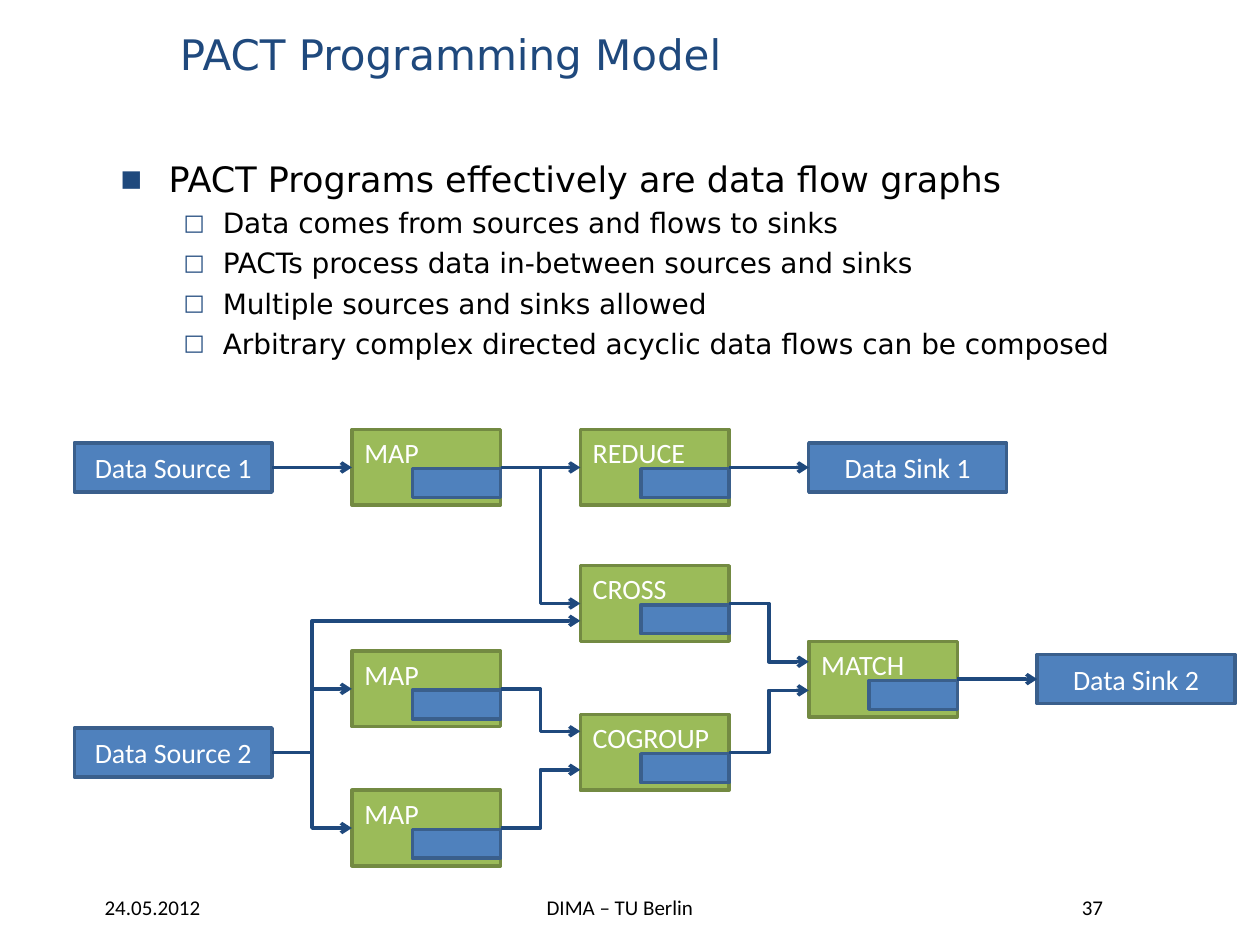
from lxml.etree import SubElement as Sub
from pptx import Presentation
from pptx.dml.color import RGBColor
from pptx.enum.shapes import MSO_CONNECTOR as Link, MSO_SHAPE as Shape
from pptx.enum.text import MSO_ANCHOR as Anchor, PP_ALIGN as Align
from pptx.oxml.ns import qn
from pptx.util import Inches, Pt

NAVY, BLUE, EDGE = "1F497D", "4F81BD", "3A5F8C"
GREEN, MOSS = "9BBB59", "738A42"
WHITE, BLACK = "FFFFFF", "000000"
SANS, BODY = "DejaVu Sans", "Calibri"
WIDE, HIGH = 10, 7.5
LEFT, TOP, COL, ROW = 0.98, 3.71, 1.813, 0.6
PACT_W, PACT_H, END_W, END_H = 1.18, 0.6, 1.57, 0.39
BEND = (COL - PACT_W) / 2


def tint(code):
    """Turn a hex string into a colour."""
    return RGBColor.from_string(code)


class Board:
    """Hold the current slide and its style."""

    def __init__(self, slide):
        """Draw on the given slide."""
        self.slide = slide

    def style(self, para, text, size, face, color, align=Align.LEFT):
        """Fill one paragraph and set its font."""
        para.text, para.alignment = text, align
        font = para.font
        font.size, font.name = Pt(size), face
        font.color.rgb = tint(color)

    def area(self, x, y, w, h, anchor=Anchor.MIDDLE):
        """Add a text frame placed by shares of the slide."""
        box = self.slide.shapes.add_textbox(
            Inches(x * WIDE), Inches(y * HIGH), Inches(w * WIDE), Inches(h * HIGH))
        frame = box.text_frame
        frame.word_wrap, frame.vertical_anchor = True, anchor
        return frame

    def label(self, place, *look):
        """Add a single line of text."""
        self.style(self.area(*place).paragraphs[0], *look)

    def bullet(self, para, mark, scale, left, hang):
        """Give a paragraph a coloured bullet and a hanging indent."""
        props = para._p.get_or_add_pPr()
        props.set("marL", str(Inches(left)))
        props.set("indent", str(-Inches(hang)))
        Sub(Sub(props, qn("a:buClr")), qn("a:srgbClr"), val=NAVY)
        Sub(props, qn("a:buSzPct"), val=str(scale * 1000))
        Sub(props, qn("a:buFont"), typeface=SANS)
        Sub(props, qn("a:buChar"), char=mark)

    def points(self, place, head, items):
        """Add a main point with its sub-points."""
        frame = self.area(*place, Anchor.TOP)
        para = frame.paragraphs[0]
        self.bullet(para, "■", 65, 0.38, 0.38)
        self.style(para, head, 20, SANS, BLACK)
        for item in items:
            para = frame.add_paragraph()
            para.level = 1
            self.bullet(para, "□", 80, 0.81, 0.31)
            para.space_before = Pt(3.7)
            self.style(para, item, 16, SANS, BLACK)

    def rect(self, x, y, w, h, fill, line):
        """Add an outlined rectangle."""
        box = self.slide.shapes.add_shape(
            Shape.RECTANGLE, Inches(x), Inches(y), Inches(w), Inches(h))
        box.shadow.inherit = False
        box.fill.solid()
        box.fill.fore_color.rgb = tint(fill)
        box.line.color.rgb, box.line.width = tint(line), Pt(2)
        return box

    def end(self, text, col, row):
        """Add a source, flush right in the first column, or a sink."""
        x = LEFT + col * COL - (0 if col else END_W - PACT_W)
        box = self.rect(x, TOP + row * ROW - END_H / 2, END_W, END_H, BLUE, EDGE)
        box.text_frame.vertical_anchor = Anchor.MIDDLE
        self.style(box.text_frame.paragraphs[0], text, 16, BODY, WHITE, Align.CENTER)
        return box

    def pact(self, text, col, row):
        """Add an operator with its user code block."""
        x, y = LEFT + col * COL, TOP + row * ROW - PACT_H / 2
        box = self.rect(x, y, PACT_W, PACT_H, GREEN, MOSS)
        box.text_frame.vertical_anchor = Anchor.TOP
        self.style(box.text_frame.paragraphs[0], text, 16, BODY, WHITE)
        self.rect(x + 0.48, y + 0.31, 0.7, 0.23, BLUE, EDGE)
        return box

    def flow(self, start, stop, port=0):
        """Join two boxes with an arrow, port rows off the target's middle."""
        x, y = start.left + start.width, start.top + start.height // 2
        far = stop.left
        low = stop.top + stop.height // 2 + Inches(port * ROW)
        flat = abs(low - y) < Inches(0.01)
        line = self.slide.shapes.add_connector(
            Link.STRAIGHT if flat else Link.ELBOW, x, y, far, low)
        line.begin_connect(start, 3)
        if not port:
            line.end_connect(stop, 1)
        line.line.color.rgb, line.line.width = tint(NAVY), Pt(2)
        props = line._element.spPr
        Sub(props.find(qn("a:ln")), qn("a:tailEnd"), type="arrow")
        Sub(props, qn("a:effectLst"))
        if not flat:
            share = round(Inches(BEND) / (far - x) * 100000)
            guides = props.find(qn("a:prstGeom")).get_or_add_avLst()
            Sub(guides, qn("a:gd"), name="adj1", fmla=f"val {share}")


def main():
    """Build the slide."""
    deck = Presentation()
    deck.slide_width, deck.slide_height = Inches(WIDE), Inches(HIGH)
    board = Board(deck.slides.add_slide(deck.slide_layouts[6]))

    board.label((0.133, 0.01, 0.75, 0.093), "PACT Programming Model", 24, SANS, NAVY)
    board.points((0.086, 0.16, 0.875, 0.236),
                 "PACT Programs effectively are data flow graphs", [
                     "Data comes from sources and flows to sinks",
                     "PACTs process data in-between sources and sinks",
                     "Multiple sources and sinks allowed",
                     "Arbitrary complex directed acyclic data flows can be composed"])
    for text, x, w in (("24.05.2012", 0.047, 0.148),
                       ("DIMA – TU Berlin", 0.367, 0.25), ("37", 0.781, 0.172)):
        board.label((x, 0.94, w, 0.04), text, 12, BODY, BLACK, Align.CENTER)

    first = board.end("Data Source 1", 0, 0)
    second = board.end("Data Source 2", 0, 3.77)
    top = board.pact("MAP", 1, 0)
    mid = board.pact("MAP", 1, 2.93)
    low = board.pact("MAP", 1, 4.77)
    fold = board.pact("REDUCE", 2, 0)
    cross = board.pact("CROSS", 2, 1.8)
    group = board.pact("COGROUP", 2, 3.77)
    match = board.pact("MATCH", 3, 2.8)
    out = board.end("Data Sink 1", 3, 0)
    last = board.end("Data Sink 2", 4, 2.8)

    for link in ((first, top), (top, fold), (fold, out), (top, cross),
                 (second, cross, 0.23), (second, mid), (second, low),
                 (mid, group, -0.28), (low, group, 0.23),
                 (cross, match, -0.23), (group, match, 0.15), (match, last)):
        board.flow(*link)
    deck.save("out.pptx")


if __name__ == "__main__":
    main()
